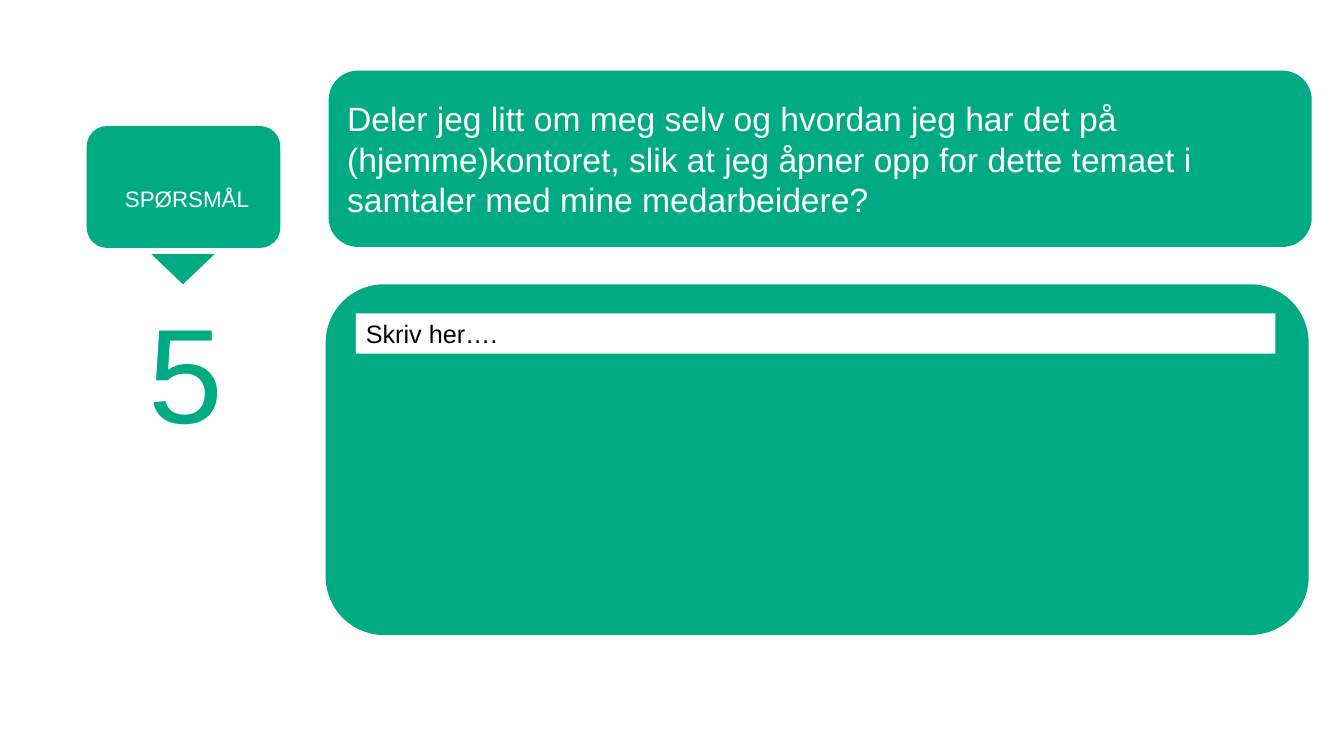
"""Build a question slide with a numbered badge and an answer field."""
from dataclasses import dataclass
from typing import Optional

from pptx import Presentation
from pptx import util as u
from pptx.dml import color
from pptx.enum import shapes, text

COLORS = {"green": "00AB84", "white": "FFFFFF", "black": "000000"}
FONT = "Arial"
RECTANGLE = shapes.MSO_SHAPE.RECTANGLE
ROUNDED = shapes.MSO_SHAPE.ROUNDED_RECTANGLE
TRIANGLE = shapes.MSO_SHAPE.ISOSCELES_TRIANGLE
TOP = text.MSO_ANCHOR.TOP
MIDDLE = text.MSO_ANCHOR.MIDDLE
LEFT = text.PP_ALIGN.LEFT
CENTER = text.PP_ALIGN.CENTER


@dataclass(frozen=True)
class Label:
    """Text with its look and placement."""
    wording: str
    size: int
    color: str
    anchor: text.MSO_ANCHOR = TOP
    align: text.PP_ALIGN = LEFT


@dataclass(frozen=True)
class Box:
    """A shape in inches; without a fill it is a plain text box."""
    left: float
    top: float
    width: float
    height: float
    kind: shapes.MSO_SHAPE = RECTANGLE
    fill: Optional[str] = None
    label: Optional[Label] = None
    rotation: int = 0


BADGE = [
    Box(0.86, 1.25, 1.92, 1.21, ROUNDED, "green"),
    Box(1.5, 2.52, 0.63, 0.3, TRIANGLE, "green", rotation=180),
    Box(0.93, 1.42, 1.85, 1.1,
        label=Label("SPØRSMÅL", 16, "white", MIDDLE, CENTER)),
]
QUESTION = (
    "Deler jeg litt om meg selv og hvordan jeg har det på (hjemme)kontoret, "
    "slik at jeg åpner opp for dette temaet i samtaler med mine medarbeidere?"
)
PANELS = [
    Box(3.26, 0.7, 9.75, 1.75, ROUNDED, "green",
        Label(QUESTION, 24, "white", MIDDLE)),
    Box(1.37, 2.82, 0.91, 1.72, RECTANGLE, "white", Label("5", 96, "green")),
    Box(3.23, 2.82, 9.75, 3.48, ROUNDED, "green"),
    Box(3.53, 3.11, 9.12, 0.4, RECTANGLE, "white",
        Label("Skriv her….", 18, "black")),
]


def rgb(name: str) -> color.RGBColor:
    """Look up a palette colour."""
    return color.RGBColor.from_string(COLORS[name])


def write_label(frame, label: Label) -> None:
    """Fill a text frame with one formatted paragraph."""
    frame.text = label.wording
    frame.word_wrap = True
    frame.vertical_anchor = label.anchor
    paragraph = frame.paragraphs[0]
    paragraph.alignment = label.align
    font = paragraph.runs[0].font
    font.name = FONT
    font.size = u.Pt(label.size)
    font.color.rgb = rgb(label.color)


def draw_box(container, box: Box) -> None:
    """Add one box to a slide's or group's shapes."""
    bounds = [u.Inches(value) for value in (box.left, box.top, box.width, box.height)]
    if box.fill is None:
        shape = container.add_textbox(*bounds)
    else:
        shape = container.add_shape(box.kind, *bounds)
        shape.shadow.inherit = False
        shape.fill.solid()
        shape.fill.fore_color.rgb = rgb(box.fill)
        shape.line.fill.background()
        shape.rotation = box.rotation
    if box.label is not None:
        write_label(shape.text_frame, box.label)


def main() -> None:
    """Create and save the presentation."""
    presentation = Presentation()
    presentation.slide_width = u.Inches(13.33)
    presentation.slide_height = u.Inches(7.5)
    slide = presentation.slides.add_slide(presentation.slide_layouts[6])
    badge = slide.shapes.add_group_shape()
    for box in BADGE:
        draw_box(badge.shapes, box)
    for box in PANELS:
        draw_box(slide.shapes, box)
    presentation.save("out.pptx")


if __name__ == "__main__":
    main()
